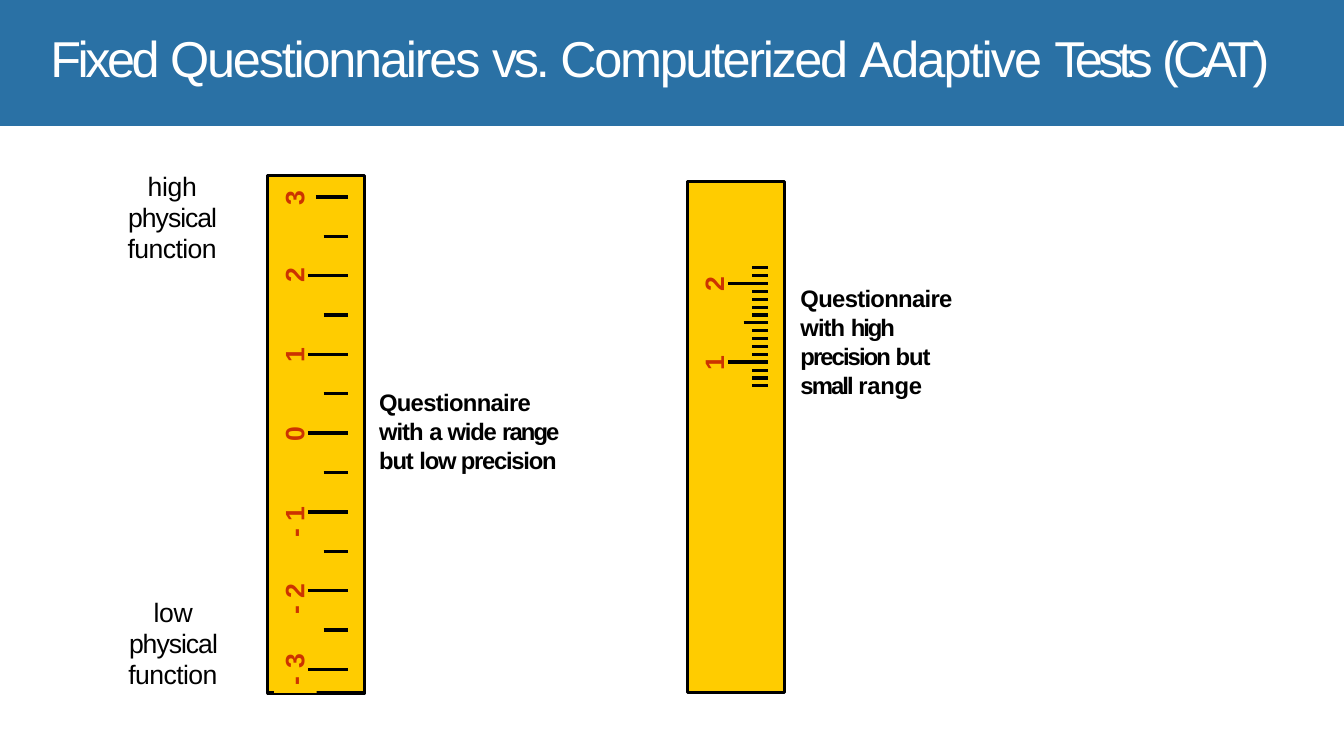
from lxml import etree
from pptx import Presentation
from pptx import util as u
from pptx.dml.color import RGBColor
from pptx.enum import shapes, text
from pptx.oxml import ns

SLIDE_WIDTH, SLIDE_HEIGHT = 13.33, 7.5
ROWS = 96
CELL = SLIDE_HEIGHT / ROWS
COLUMNS = SLIDE_WIDTH / CELL
ROWS_PER_POINT = 10
RULER_WIDTH = 12.3
TICK_END = 10.2
LONG, MEDIUM, SHORT = 5.1, 3.1, 2
COLORS = {
    "banner": "2A71A5",
    "title": "FFFFFF",
    "ruler": "FFCC00",
    "ink": "000000",
    "numeral": "CC3300",
}


def cells(count):
    return u.Inches(count * CELL)


def color(name):
    return RGBColor.from_string(COLORS[name])


def add_block(slide, left, top, width, height, fill, outlined=False):
    shape = slide.shapes.add_shape(
        shapes.MSO_SHAPE.RECTANGLE, *map(cells, (left, top, width, height)))
    shape.shadow.inherit = False
    shape.fill.solid()
    shape.fill.fore_color.rgb = color(fill)
    if outlined:
        shape.line.color.rgb = color("ink")
        shape.line.width = u.Pt(2.25)
    else:
        shape.line.fill.background()
    return shape


def write_runs(frame, runs, size, ink, bold=False, line_spacing=1.0,
               alignment=text.PP_ALIGN.LEFT, insets=(0, 0, 0, 0)):
    frame.word_wrap = True
    frame.auto_size = text.MSO_AUTO_SIZE.NONE
    frame.vertical_anchor = text.MSO_ANCHOR.TOP
    (frame.margin_left, frame.margin_top,
     frame.margin_right, frame.margin_bottom) = map(u.Inches, insets)
    paragraph = frame.paragraphs[0]
    paragraph.alignment = alignment
    paragraph.line_spacing = line_spacing
    for wording, spacing in runs:
        run = paragraph.add_run()
        run.text = wording
        run.font.name = "Arial"
        run.font.size = u.Pt(size)
        run.font.bold = bold
        run.font.color.rgb = color(ink)
        run._r.get_or_add_rPr().set("spc", str(round(spacing * 100)))


def add_text(slide, left, top, width, height, runs, size, ink, **style):
    box = slide.shapes.add_textbox(*map(cells, (left, top, width, height)))
    write_runs(box.text_frame, runs, size, ink, **style)
    return box


def add_description(slide, left, top, runs):
    add_text(slide, left, top, 23, 11.3, runs, 17, "ink", bold=True,
             line_spacing=1.01, insets=(0.01, 0.02, 0, 0))


def add_end_label(slide, left, top, runs):
    add_text(slide, left, top, 11.8, 12.4, runs, 19, "ink",
             line_spacing=0.98, alignment=text.PP_ALIGN.CENTER,
             insets=(0.01, 0.04, 0, 0))


def add_tick(slide, ruler_left, row, length, weight=2.25):
    end = ruler_left + TICK_END
    tick = slide.shapes.add_connector(
        shapes.MSO_CONNECTOR.STRAIGHT,
        *map(cells, (end - length, row, end, row)))
    tick.line.color.rgb = color("ink")
    tick.line.width = u.Pt(weight)
    etree.SubElement(tick._element.spPr, ns.qn("a:effectLst"))


def add_numeral(slide, ruler_left, value, top):
    runs = [(str(abs(value)), -0.5)]
    height = 2.2
    if value < 0:
        runs.insert(0, ("- ", 0))
        height = 4.3
    box = add_text(slide, ruler_left + 1.4, top, 4.1, height, runs, 19,
                   "numeral", bold=True, line_spacing=u.Pt(22))
    box.text_frame._txBody.bodyPr.set("vert", "vert270")


def add_title(slide):
    title = slide.shapes.title
    title.left, title.top, title.width, title.height = map(
        cells, (5.5, 0.8, 159.6, 17.4))
    write_runs(title.text_frame, [
        ("Fixed ", -2.5), ("Questionnaires ", -1.6), ("vs. ", -2.4),
        ("Computerized ", -1.7), ("Adaptive ", -1.4), ("Tests ", -3.4),
        ("(CAT)", -4.2),
    ], 36, "title", insets=(0.07, 0.21, 0, 0))
    slide.shapes._spTree.append(title._element)


def add_wide_ruler(slide):
    left, first_row = 34, 25
    add_block(slide, left, 22.3, RULER_WIDTH, 65.7, "ruler", outlined=True)
    add_block(slide, left + 0.8, 81.5, 5.4, 6.5, "ruler")
    for step in range(7):
        row = first_row + step * ROWS_PER_POINT
        add_tick(slide, left, row, LONG if step else LONG - 1, 2.58)
        if step < 6:
            add_tick(slide, left, row + ROWS_PER_POINT / 2, MEDIUM)
    numeral_tops = (23.9, 33.7, 43.8, 53.8, 64, 73.7, 82.7)
    for value, top in zip(range(3, -4, -1), numeral_tops):
        add_numeral(slide, left, value, top)


def add_precise_ruler(slide):
    left = 87.3
    add_block(slide, left, 23, RULER_WIDTH, 65, "ruler", outlined=True)
    for row in range(34, 50):
        add_tick(slide, left, row, SHORT)
    add_tick(slide, left, 41, MEDIUM)
    for value, row in ((2, 36), (1, 46)):
        add_tick(slide, left, row, LONG, 2.58)
        add_numeral(slide, left, value, row - 1.2)


def main():
    presentation = Presentation()
    presentation.slide_width = u.Inches(SLIDE_WIDTH)
    presentation.slide_height = u.Inches(SLIDE_HEIGHT)
    slide = presentation.slides.add_slide(presentation.slide_layouts[5])
    add_block(slide, 0, 0, COLUMNS, 16, "banner")
    add_title(slide)
    add_wide_ruler(slide)
    add_description(slide, 48, 49, [
        ("Questionnaire ", -0.5), ("with ", -0.7), ("a ", -1.2),
        ("wide ", -0.9), ("range ", -1.4), ("but ", -0.8),
        ("low precision", -0.9),
    ])
    add_precise_ruler(slide)
    add_description(slide, 101.5, 35.8, [
        ("Questionnaire ", -0.5), ("with ", -0.7), ("high ", -1.5),
        ("precision ", -1.4), ("but ", -0.8), ("small ", -1.4),
        ("range", -0.2),
    ])
    for level, left, top in (("high ", 15.9, 21.2), ("low ", 16, 75.3)):
        add_end_label(slide, left, top, [
            (level, -0.2), ("physical ", -0.7), ("function", -0.4)])
    presentation.save("out.pptx")


if __name__ == "__main__":
    main()
